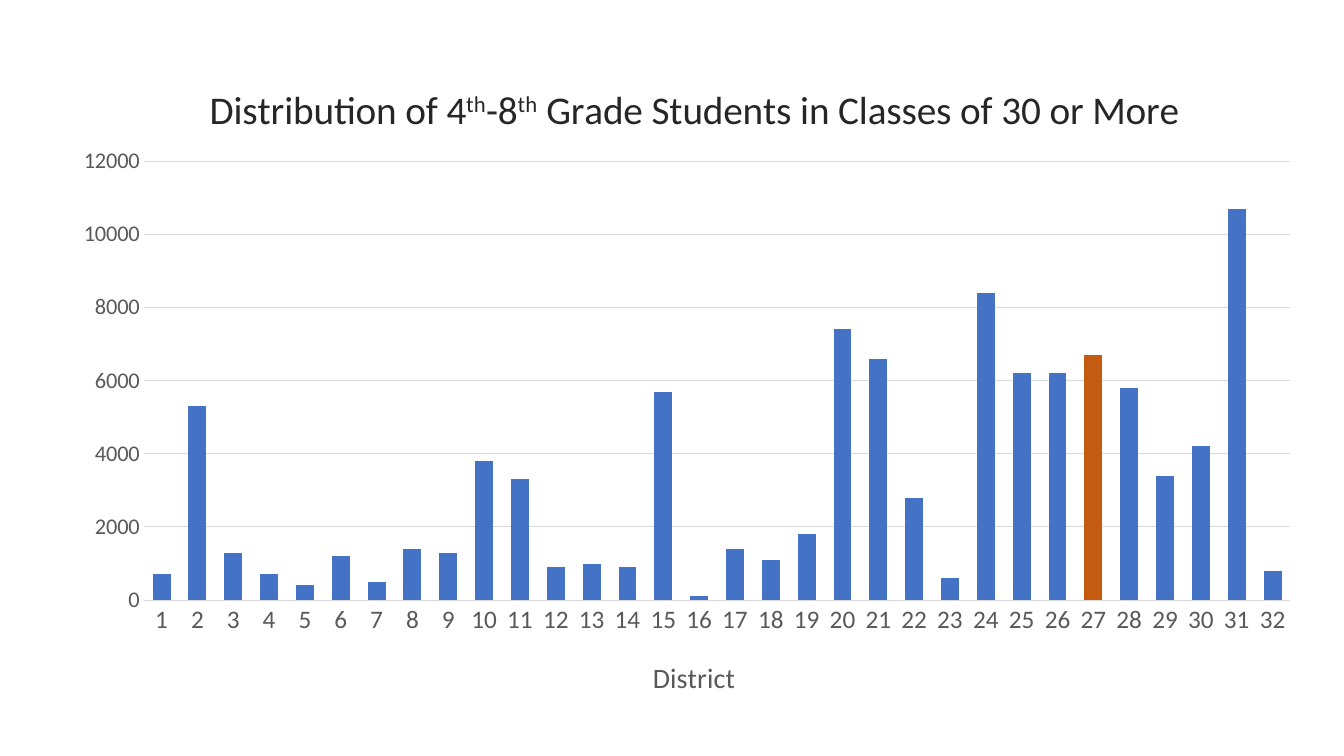
from pptx import Presentation
from pptx import util as u
from pptx.chart.data import CategoryChartData
from pptx.dml.color import RGBColor
from pptx.enum import chart as ch
from pptx.oxml import parse_xml
from pptx.oxml.ns import nsdecls, qn

# Content
STUDENTS = [700, 5300, 1300, 700, 400, 1200, 500, 1400,
            1300, 3800, 3300, 900, 1000, 900, 5700, 100,
            1400, 1100, 1800, 7400, 6600, 2800, 600, 8400,
            6200, 6200, 6700, 5800, 3400, 4200, 10700, 800]
HIGHLIGHTED_DISTRICT = 27
HEADING = [("Distribution of 4", False), ("th", True), ("-8", False), ("th", True),
           (" Grade Students in Classes of 30 or More", False)]
AXIS_LABEL = [("District", False)]

COLORS = {"bar": "4472C4", "highlight": "C55A11", "heading": "262626",
          "label": "595959", "rule": "D9D9D9"}
FONT = "Calibri"

# Fractions of the chart frame
PLOT_LAYOUT = {"x": 0.07, "y": 0.16, "w": 0.91, "h": 0.67}
HEADING_LAYOUT = {"x": 0.12, "y": 0.04}
AXIS_LABEL_LAYOUT = {"x": 0.47, "y": 0.91}


def rgb(name):
    return RGBColor.from_string(COLORS[name])


def style_font(font, size, color):
    for key, value in {"name": FONT, "size": u.Pt(size), "bold": False}.items():
        setattr(font, key, value)
    font.color.rgb = rgb(color)


def style_line(line):
    line.color.rgb = rgb("rule")
    line.width = u.Pt(0.75)


def place(element, index, fractions):
    for old in element.findall(qn("c:layout")):
        element.remove(old)
    inner = '<c:layoutTarget val="inner"/>' if "w" in fractions else ""
    modes = "".join(f'<c:{k}Mode val="edge"/>' for k in "xy")
    sizes = "".join(f'<c:{k} val="{v}"/>' for k, v in fractions.items())
    element.insert(index, parse_xml(
        f'<c:layout {nsdecls("c")}><c:manualLayout>{inner}{modes}{sizes}'
        '</c:manualLayout></c:layout>'))


def write_title(title, pieces, size, color, fractions):
    paragraph = title.text_frame.paragraphs[0]
    style_font(paragraph.font, size, color)
    for words, raised in pieces:
        run = paragraph.add_run()
        run.text = words
        style_font(run.font, size, color)
        if raised:
            run.font._element.set("baseline", "30000")
    place(title._element, 1, fractions)


prs = Presentation()
prs.slide_width, prs.slide_height = u.Inches(13.33), u.Inches(7.5)
slide = prs.slides.add_slide(prs.slide_layouts[6])

# Column chart
data = CategoryChartData()
data.categories = [str(n + 1) for n in range(len(STUDENTS))]
data.add_series("Series 1", STUDENTS)
frame = [u.Inches(n) for n in (0.55, 0.56, 12.5, 6.5)]
chart = slide.shapes.add_chart(ch.XL_CHART_TYPE.COLUMN_CLUSTERED, *frame, data).chart
chart.has_legend = False
chart.font.name, chart.font.size = FONT, u.Pt(10)
place(chart._chartSpace.chart.plotArea, 0, PLOT_LAYOUT)

# Bars
plot = chart.plots[0]
plot.gap_width = 100
plot.vary_by_categories = False
students = plot.series[0]
highlight = students.points[HIGHLIGHTED_DISTRICT - 1]
for bar, color in ((students, "bar"), (highlight, "highlight")):
    bar.format.fill.solid()
    bar.format.fill.fore_color.rgb = rgb(color)

# Axes
districts, counts = chart.category_axis, chart.value_axis
for axis, size in ((districts, 18), (counts, 16)):
    axis.major_tick_mark = axis.minor_tick_mark = ch.XL_TICK_MARK.NONE
    style_font(axis.tick_labels.font, size, "label")
style_line(districts.format.line)
counts.format.line.fill.background()
counts.minimum_scale, counts.maximum_scale, counts.major_unit = 0, 12000, 2000
style_line(counts.major_gridlines.format.line)

# Titles
write_title(chart.chart_title, HEADING, 28, "heading", HEADING_LAYOUT)
write_title(districts.axis_title, AXIS_LABEL, 20, "label", AXIS_LABEL_LAYOUT)

prs.save("out.pptx")
